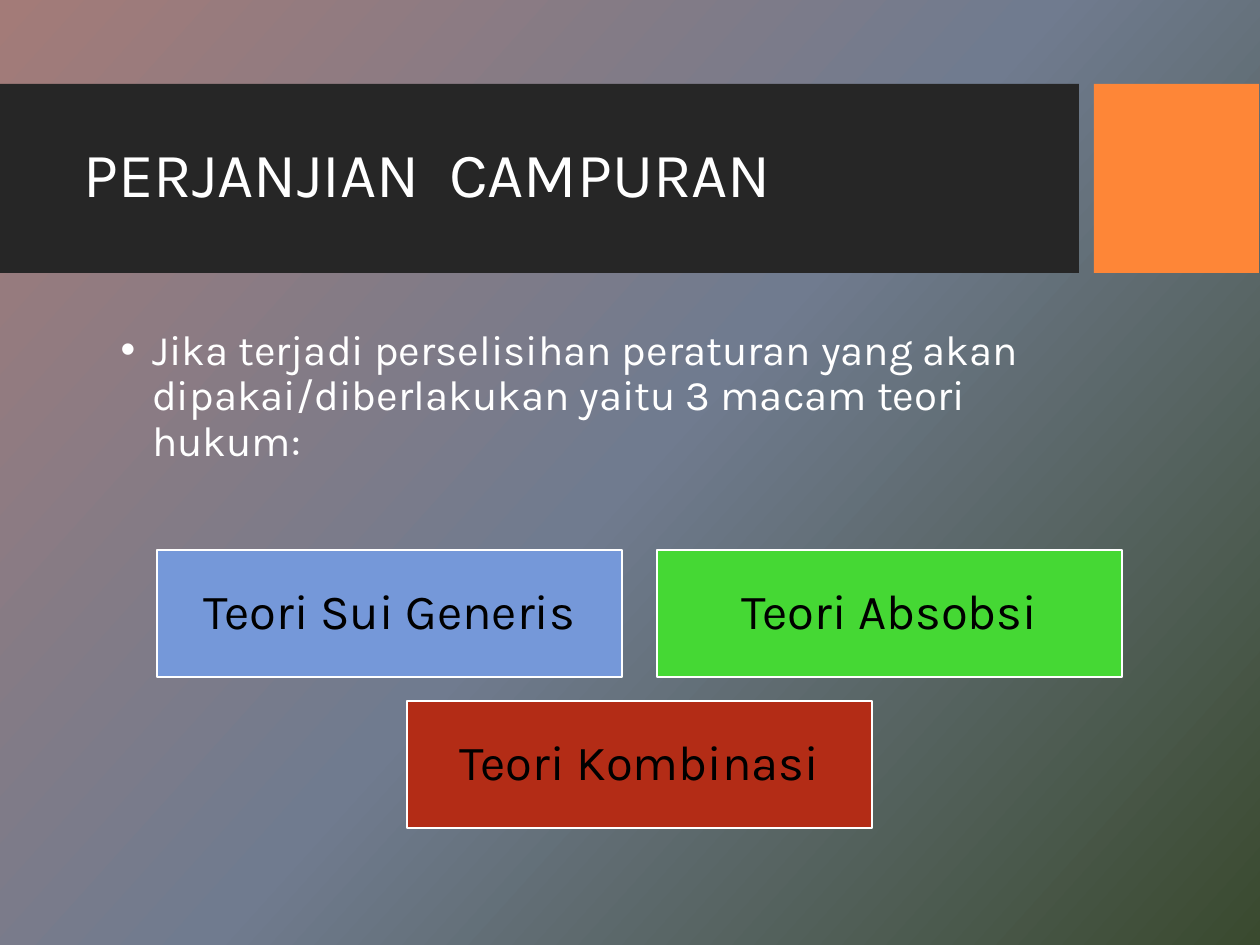
from copy import deepcopy

from lxml.etree import SubElement
from pptx import Presentation
from pptx.dml.color import RGBColor
from pptx.enum.shapes import MSO_SHAPE as Shape
from pptx.enum.text import MSO_ANCHOR as Anchor, MSO_AUTO_SIZE as AutoSize, PP_ALIGN as Align
from pptx.oxml.ns import qn
from pptx.util import Inches, Pt

PX = Inches(1) / 126
FONT = "Karla"
WHITE, BLACK = "FFFFFF", "000000"

BACKGROUND = [(0, "A37B78"), (0.5, "707B8F"), (1, "3A4A2F")]
TITLE = "PERJANJIAN  CAMPURAN"
INTRO = ("Jika terjadi perselisihan peraturan yang akan "
         "dipakai/diberlakukan yaitu 3 macam teori hukum:")
THEORIES = [
    ("Teori Sui Generis", "7598D9", 0, 0),
    ("Teori Absobsi", "45D834", 1, 0),
    ("Teori Kombinasi", "B32C16", 0.5, 1),
]


def px(length):
    return round(length * PX)


def color(code):
    return RGBColor.from_string(code)


def paint_background(page):
    fill = page.background.fill
    fill.gradient()
    fill.gradient_angle = 318
    stop_list = page._element.xpath(".//a:gsLst")[0]
    stop_list.append(deepcopy(stop_list[0]))
    for stop, (position, code) in zip(fill.gradient_stops, BACKGROUND):
        stop.position = position
        stop.color.rgb = color(code)


def add_rectangle(page, left, top, width, height, code):
    box = page.shapes.add_shape(Shape.RECTANGLE, px(left), px(top), px(width), px(height))
    box.shadow.inherit = False
    box.fill.solid()
    box.fill.fore_color.rgb = color(code)
    box.line.fill.background()
    return box


def add_band(page, left, width, code):
    band = add_rectangle(page, left, 84, width, 189, code)
    page.shapes._spTree.insert(2, band._element)


def write(box, text, size, code, align, anchor):
    frame = box.text_frame
    frame.text = text
    frame.word_wrap = True
    frame.auto_size = AutoSize.NONE
    frame.vertical_anchor = anchor
    para = frame.paragraphs[0]
    para.alignment = align
    para.line_spacing = 0.9
    para.space_before = Pt(0)
    return para


def style(para, size, code):
    para.font.name = FONT
    para.font.size = Pt(size)
    para.font.color.rgb = color(code)


def fill_placeholder(box, left, top, width, height, text, size, anchor):
    box.left, box.top, box.width, box.height = map(px, (left, top, width, height))
    return write(box, text, size, WHITE, Align.LEFT, anchor)


def add_bullet(para):
    props = para._p.get_or_add_pPr()
    props.set("marL", str(Inches(0.25)))
    props.set("indent", str(-Inches(0.25)))
    SubElement(props, qn("a:buFont"), typeface="Arial")
    SubElement(props, qn("a:buChar"), char="•")


def add_theory(page, text, code, column, row):
    box = add_rectangle(page, 157 + column * 500, 550 + row * 151, 465, 127, code)
    box.line.color.rgb = color(WHITE)
    box.line.width = Pt(1)
    style(write(box, text, 28, BLACK, Align.CENTER, Anchor.MIDDLE), 28, BLACK)


def main():
    deck = Presentation()
    deck.slide_width, deck.slide_height = Inches(10), Inches(7.5)
    page = deck.slides.add_slide(deck.slide_layouts[1])
    paint_background(page)
    add_band(page, 0, 1079, "262626")
    add_band(page, 1094, 165, "FE8637")

    title = fill_placeholder(page.shapes.title, 71, 103, 994, 149, TITLE, 36, Anchor.MIDDLE)
    style(title, 36, WHITE)
    intro = fill_placeholder(page.placeholders[1], 108, 323, 955, 496, INTRO, 24, Anchor.TOP)
    add_bullet(intro)
    style(intro, 24, WHITE)

    for theory in THEORIES:
        add_theory(page, *theory)
    deck.save("out.pptx")


if __name__ == "__main__":
    main()
